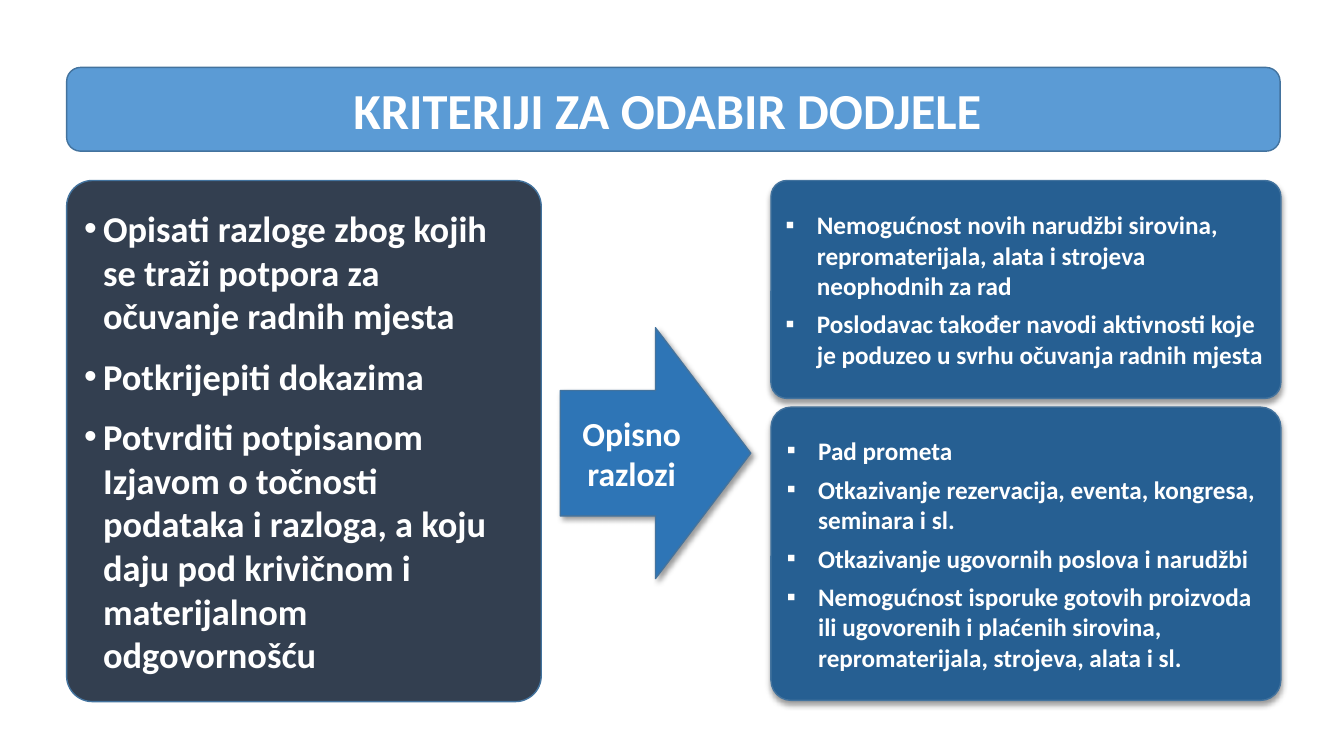
from lxml import etree
from pptx import Presentation
from pptx.dml.color import RGBColor
from pptx.enum.shapes import MSO_SHAPE
from pptx.enum.text import MSO_ANCHOR, PP_ALIGN
from pptx.oxml.ns import qn
from pptx.util import Cm, Pt

LEFT, TOP = 1.68, 4.55
RIGHT_LEFT, RIGHT_WIDTH = 19.43, 12.85
RIGHT_FILL = "265F92"

REQUIREMENTS = [
    "Opisati razloge zbog kojih se traži potpora za očuvanje radnih mjesta",
    "Potkrijepiti dokazima",
    "Potvrditi potpisanom Izjavom o točnosti podataka i razloga, a koju daju "
    "pod krivičnom i materijalnom odgovornošću",
]
SUPPLY_REASONS = [
    "Nemogućnost novih narudžbi sirovina, repromaterijala, alata i strojeva "
    "neophodnih za rad",
    "Poslodavac također navodi aktivnosti koje je poduzeo u svrhu očuvanja "
    "radnih mjesta",
]
SALES_REASONS = [
    "Pad prometa",
    "Otkazivanje rezervacija, eventa, kongresa, seminara i sl.",
    "Otkazivanje ugovornih poslova i narudžbi",
    "Nemogućnost isporuke gotovih proizvoda ili ugovorenih i plaćenih "
    "sirovina, repromaterijala, strojeva, alata i sl.",
]


def color(hex_value):
    return RGBColor.from_string(hex_value)


def add_block(s, kind, box, fill, adj=None):
    sp = s.shapes.add_shape(kind, *[Cm(v) for v in box])
    sp.shadow.inherit = False
    sp.fill.solid()
    sp.fill.fore_color.rgb = color(fill)
    sp.line.color.rgb = color("43739E")
    sp.line.width = Pt(1)
    if adj is not None:
        sp.adjustments[0] = adj
    tf = sp.text_frame
    tf.word_wrap = True
    tf.vertical_anchor = MSO_ANCHOR.MIDDLE
    return sp


def add_shadow(sp, angle):
    effects = sp._element.spPr.find(qn("a:effectLst"))
    shadow = etree.SubElement(
        effects, qn("a:outerShdw"), blurRad=str(Pt(4)), dist=str(Pt(3)),
        dir=str(angle * 60000), algn="ctr", rotWithShape="0")
    clr = etree.SubElement(shadow, qn("a:srgbClr"), val="000000")
    etree.SubElement(clr, qn("a:alpha"), val="40000")


def add_run(p, text, size):
    r = p.add_run()
    r.text = text
    r.font.name = "Calibri"
    r.font.size = Pt(size)
    r.font.bold = True
    r.font.color.rgb = color("FFFFFF")


def add_label(sp, text, size):
    p = sp.text_frame.paragraphs[0]
    p.alignment = PP_ALIGN.CENTER
    add_run(p, text, size)


def add_bullets(sp, items, size, char, font, indent, after):
    tf = sp.text_frame
    for i, text in enumerate(items):
        p = tf.add_paragraph() if i else tf.paragraphs[0]
        p.alignment = PP_ALIGN.LEFT
        p.space_after = Pt(after)
        pPr = p._p.get_or_add_pPr()
        pPr.set("marL", str(Cm(indent)))
        pPr.set("indent", str(-Cm(indent)))
        etree.SubElement(pPr, qn("a:buFont"), typeface=font)
        etree.SubElement(pPr, qn("a:buChar"), char=char)
        add_run(p, text, size)


def add_reasons(s, top, height, adj, items):
    sp = add_block(s, MSO_SHAPE.ROUNDED_RECTANGLE,
                   (RIGHT_LEFT, top, RIGHT_WIDTH, height), RIGHT_FILL, adj)
    add_shadow(sp, 90)
    add_bullets(sp, items, 18, "▪", "Calibri", 0.79, 6)


def main():
    prs = Presentation()
    prs.slide_width, prs.slide_height = Cm(33.87), Cm(19.05)
    s = prs.slides.add_slide(prs.slide_layouts[6])

    # Title bar
    title = add_block(s, MSO_SHAPE.ROUNDED_RECTANGLE,
                      (LEFT, 1.7, 30.58, 2.11), "5B9BD5")
    add_label(title, "KRITERIJI ZA ODABIR DODJELE ", 36)

    # Requirements on the left
    panel = add_block(s, MSO_SHAPE.ROUNDED_RECTANGLE,
                      (LEFT, TOP, 11.96, 13.13), "333F50", 0.054)
    add_bullets(panel, REQUIREMENTS, 26, "•", "Arial", 0.48, 12)

    # Arrow towards the reasons
    arrow = add_block(s, MSO_SHAPE.RIGHT_ARROW,
                      (14.12, 8.26, 4.8, 6.32), "2E75B6")
    add_shadow(arrow, 45)
    add_label(arrow, "Opisno razlozi", 24)

    # Reasons on the right
    add_reasons(s, 10.26, 7.39, 0.069, SALES_REASONS)
    add_reasons(s, TOP, 5.49, 0.073, SUPPLY_REASONS)

    prs.save("out.pptx")


if __name__ == "__main__":
    main()
